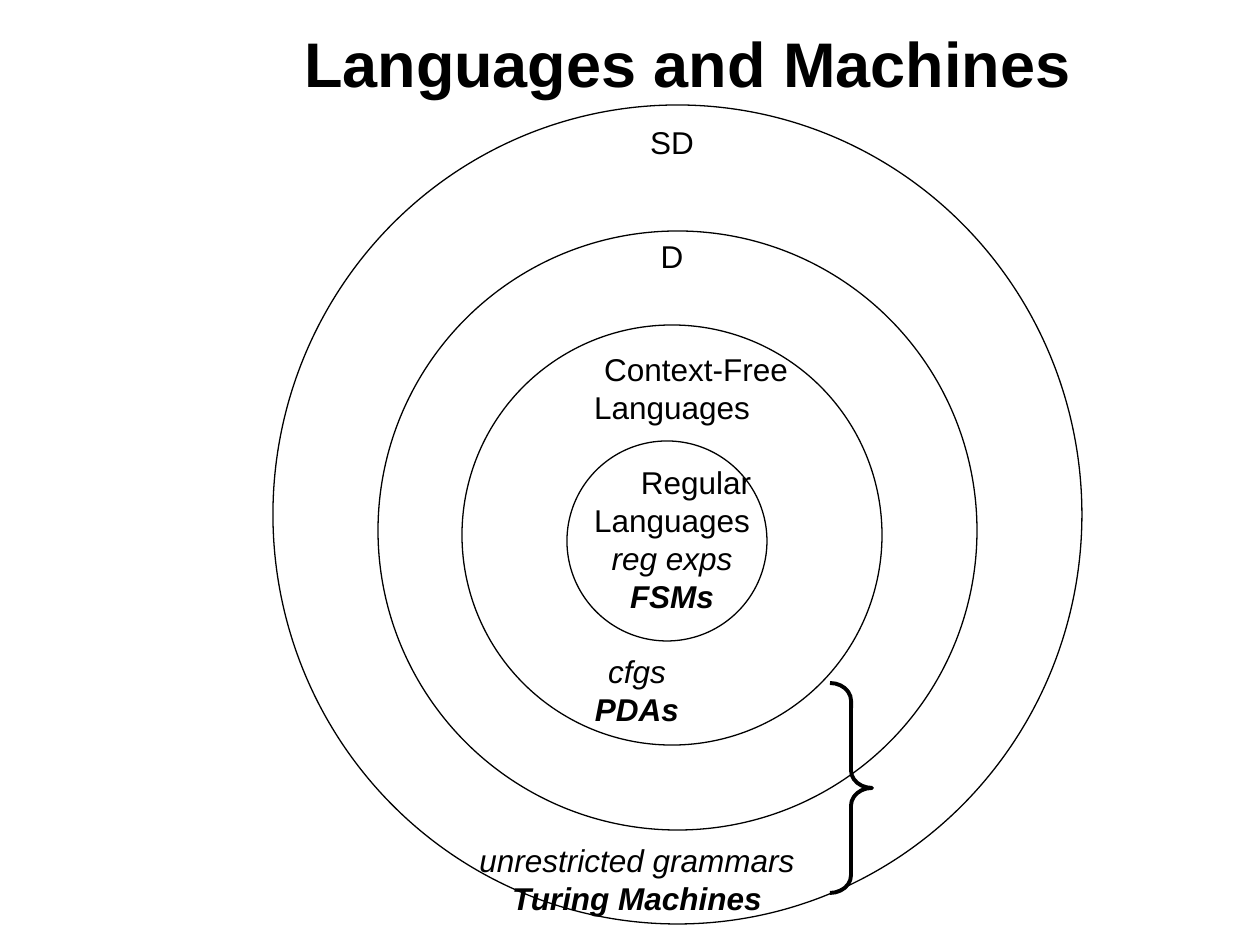
"""Build the slide that nests the language classes and names their machines."""
from pptx import Presentation
from pptx.dml.color import RGBColor
from pptx.enum.shapes import MSO_SHAPE as Preset
from pptx.enum.text import MSO_ANCHOR as Anchor, MSO_AUTO_SIZE as AutoSize, PP_ALIGN as Align
from pptx.util import Emu, Pt

COLORS = {"ink": "000000"}
INK = RGBColor.from_string(COLORS["ink"])
LINE_PITCH = 21.6
PLAIN = {"bold": False, "italic": False}
NOTATION = {"bold": False, "italic": True}
MACHINE = {"bold": True, "italic": True}


def px(*lengths):
    return [Emu(round(length * 914400 / 126)) for length in lengths]


def format_font(font, size, style):
    font.color.rgb = INK
    for key, value in {"name": "Arial", "size": Pt(size), **style}.items():
        setattr(font, key, value)


prs = Presentation()
prs.slide_width, prs.slide_height = px(1260, 945)
slide = prs.slides.add_slide(prs.slide_layouts[5])

title = slide.shapes.title
title.left, title.top, title.width, title.height = px(105, 10, 1165, 105)
title.text_frame.text = "Languages and Machines"
title.text_frame.vertical_anchor = Anchor.MIDDLE
title.text_frame.auto_size = AutoSize.NONE
heading = title.text_frame.paragraphs[0]
heading.alignment = Align.CENTER
format_font(heading.font, 36, {"bold": True})

labels = [
    ("SD", 0, PLAIN, {}),
    ("D", 2, PLAIN, {}),
    ("Context-Free", 2, PLAIN, {"marL": 48}),
    ("Languages", 0, PLAIN, {}),
    ("Regular", 1, PLAIN, {"marL": 48}),
    ("Languages", 0, PLAIN, {}),
    ("reg exps", 0, NOTATION, {}),
    ("FSMs", 0, MACHINE, {}),
    ("cfgs", 1, NOTATION, {"marR": 70}),
    ("PDAs", 0, MACHINE, {}),
    ("unrestricted grammars", 3, NOTATION, {}),
    ("Turing Machines", 0, MACHINE, {}),
]
hierarchy = slide.shapes.add_textbox(*px(116, 117, 1112, 808)).text_frame
hierarchy.word_wrap = True
for index, (wording, skipped_lines, style, margins) in enumerate(labels):
    label = hierarchy.add_paragraph() if index else hierarchy.paragraphs[0]
    label.text = wording
    label.alignment = Align.CENTER
    label.line_spacing = Pt(LINE_PITCH)
    label.space_before = Pt(skipped_lines * LINE_PITCH)
    for side, margin in margins.items():
        label._p.get_or_add_pPr().set(side, str(px(margin)[0]))
    format_font(label.runs[0].font, 18, style)

outlines = [
    (Preset.OVAL, (567, 441, 200, 200), 0.75),
    (Preset.OVAL, (462, 325, 420, 420), 0.75),
    (Preset.OVAL, (378, 231, 599, 599), 0.75),
    (Preset.OVAL, (273, 105, 809, 819), 0.75),
    (Preset.RIGHT_BRACE, (830, 683, 42, 210), 2.25),
]
for preset, box, weight in outlines:
    outline = slide.shapes.add_shape(preset, *px(*box))
    outline.shadow.inherit = False
    outline.fill.background()
    outline.line.color.rgb = INK
    outline.line.width = Pt(weight)
    if preset == Preset.RIGHT_BRACE:
        outline.adjustments[0] = 0.42

prs.save("out.pptx")
